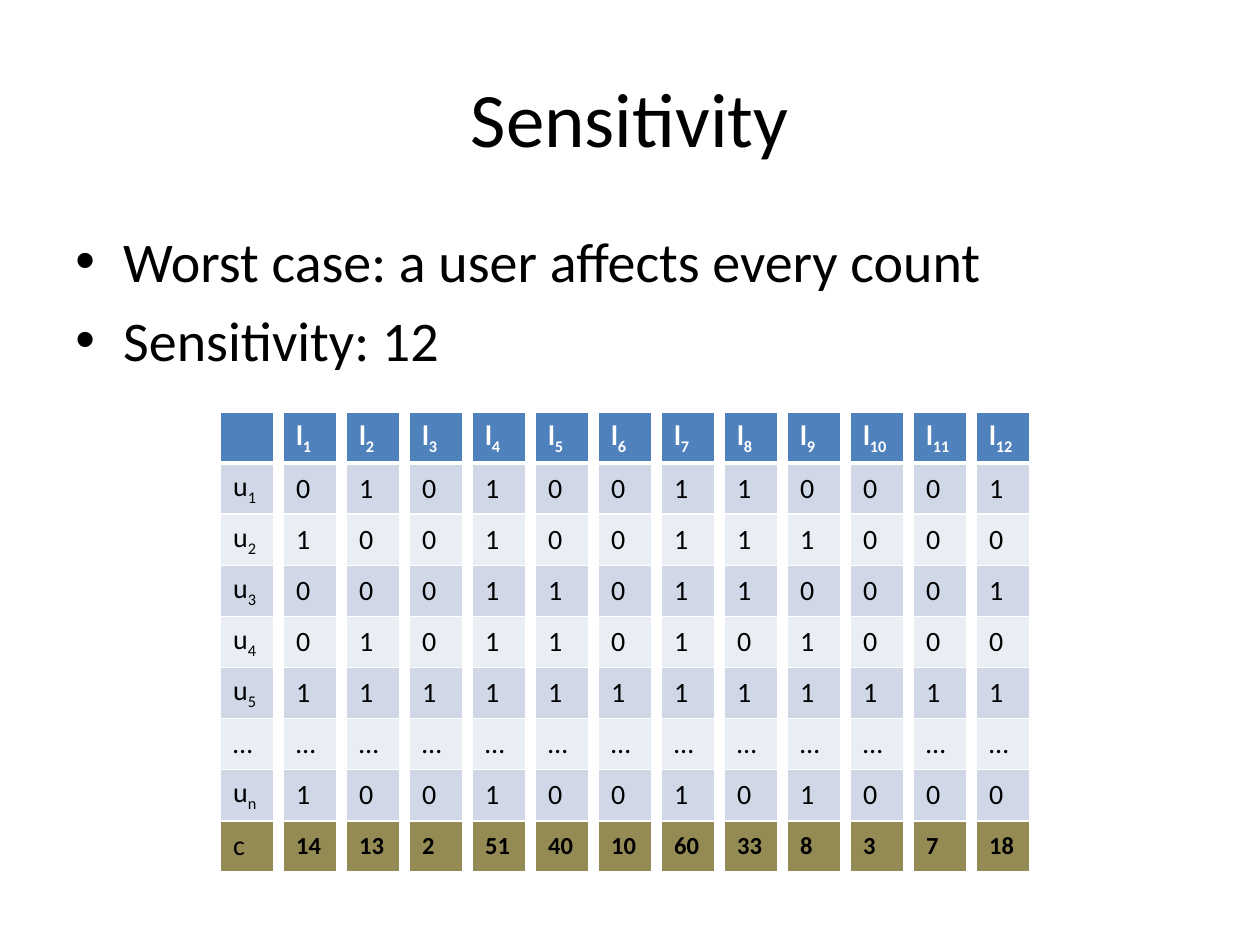
import pptx
import pptx.dml.color
import pptx.enum.text
import pptx.oxml
import pptx.oxml.ns
import pptx.util

Inches, Pt = pptx.util.Inches, pptx.util.Pt
RGB = pptx.dml.color.RGBColor.from_string
ANCHOR, ALIGN = pptx.enum.text.MSO_ANCHOR, pptx.enum.text.PP_ALIGN

# Content: "a_b" means a with subscript b
TITLE = "Sensitivity"
BULLETS = ["Worst case: a user affects every count", "Sensitivity: 12"]
USERS = ["u_1", "u_2", "u_3", "u_4", "u_5", "…", "u_n", "c"]
VISITS = [  # one row per user, one column per location
    "0 1 0 1 0 0 1 1 0 0 0 1",
    "1 0 0 1 0 0 1 1 1 0 0 0",
    "0 0 0 1 1 0 1 1 0 0 0 1",
    "0 1 0 1 1 0 1 0 1 0 0 0",
    "1 1 1 1 1 1 1 1 1 1 1 1",
    "… … … … … … … … … … … …",
    "1 0 0 1 0 0 1 0 1 0 0 0",
    "14 13 2 51 40 10 60 33 8 3 7 18",
]

THEME = {
    "font": "Calibri", "text": "000000", "light": "FFFFFF",
    "header": "4F81BD", "bands": ("D0D8E8", "E9EDF4"), "total": "948A54",
    "title_size": 44, "body_size": 32, "cell_size": 16, "total_size": 14,
}

# Layout in inches
SLIDE_W, SLIDE_H = 10, 7.5
MARGIN = SLIDE_W / 20
GRID_LEFT, GRID_TOP, GRID_H = 1.75, 3.27, 3.65
COL_STEP, COL_W = 0.5, 0.42


def add_text(p, text, size, color=THEME["text"], bold=False):
    """Write text in a paragraph, with the part after "_" as subscript."""
    for i, part in enumerate(text.split("_")):
        r = p.add_run()
        r.text = part
        fmt = {"name": THEME["font"], "size": Pt(size), "bold": bold}
        for name, value in fmt.items():
            setattr(r.font, name, value)
        r.font.color.rgb = RGB(color)
        if i:
            r._r.get_or_add_rPr().set("baseline", "-25000")


def add_box(slide, top, height, anchor):
    sp = slide.shapes.add_textbox(Inches(MARGIN), Inches(top),
                                  Inches(SLIDE_W - 2 * MARGIN), Inches(height))
    tf = sp.text_frame
    for name, value in {"word_wrap": True, "vertical_anchor": anchor}.items():
        setattr(tf, name, value)
    return tf


def set_borders(cell, widths):
    tcPr = cell._tc.get_or_add_tcPr()
    for side, width in zip("LRTB", widths):
        tcPr.append(pptx.oxml.parse_xml(
            f'<a:ln{side} {pptx.oxml.ns.nsdecls("a")} w="{Pt(width)}"><a:solidFill>'
            f'<a:srgbClr val="{THEME["light"]}"/></a:solidFill></a:ln{side}>'))


def add_column(slide, index, texts):
    """Add one single-column table: header, banded rows, total."""
    last = len(texts) - 1
    frame = slide.shapes.add_table(
        len(texts), 1, Inches(GRID_LEFT + index * COL_STEP), Inches(GRID_TOP),
        Inches(COL_W), Inches(GRID_H))
    for i, text in enumerate(texts):
        cell = frame.table.cell(i, 0)
        cell.vertical_anchor = ANCHOR.MIDDLE
        set_borders(cell, (1, 1, 3 if i == 1 else 1, 3 if i == 0 else 1))
        color, size, bold = THEME["text"], THEME["cell_size"], False
        if i == 0:
            fill, color, bold = THEME["header"], THEME["light"], True
        elif i == last:
            fill = THEME["total"]
            if index:  # counts, not the row label
                size, bold = THEME["total_size"], True
        else:
            fill = THEME["bands"][(i - 1) % 2]
        cell.fill.solid()
        cell.fill.fore_color.rgb = RGB(fill)
        if text:
            add_text(cell.text_frame.paragraphs[0], text, size, color, bold)


prs = pptx.Presentation()
prs.slide_width, prs.slide_height = Inches(SLIDE_W), Inches(SLIDE_H)
s = prs.slides.add_slide(prs.slide_layouts[6])

# Location columns, then the user labels
for n, values in enumerate(zip(*(row.split() for row in VISITS)), 1):
    add_column(s, n, [f"l_{n}", *values])
add_column(s, 0, ["", *USERS])

# Title
p = add_box(s, 0.3, 1.25, ANCHOR.MIDDLE).paragraphs[0]
p.alignment = ALIGN.CENTER
add_text(p, TITLE, THEME["title_size"])

# Bullets
tf = add_box(s, 1.75, 4.95, ANCHOR.TOP)
for i, line in enumerate(BULLETS):
    p = tf.add_paragraph() if i else tf.paragraphs[0]
    p.space_before = Pt(0.2 * THEME["body_size"])
    pPr = p._p.get_or_add_pPr()
    for name, value in {"marL": 0.38, "indent": -0.38}.items():
        pPr.set(name, str(Inches(value)))
    for xml in ('buFont {} typeface="Arial"', 'buChar {} char="•"'):
        pPr.append(pptx.oxml.parse_xml(
            f'<a:{xml.format(pptx.oxml.ns.nsdecls("a"))}/>'))
    add_text(p, line, THEME["body_size"])

prs.save("out.pptx")
